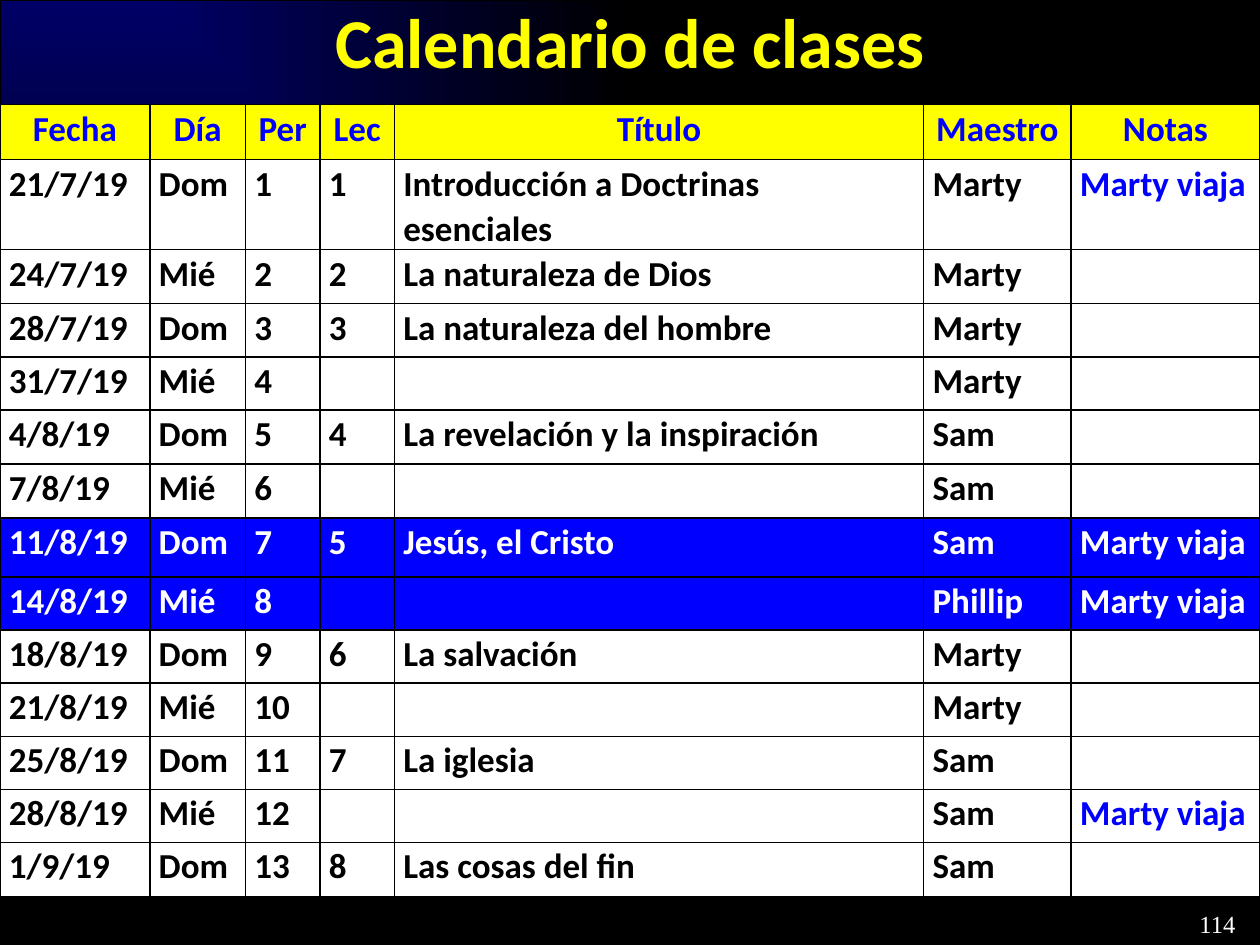
from lxml import etree
from pptx import Presentation
from pptx import util as u
from pptx.dml.color import RGBColor
from pptx.enum import shapes, text
from pptx.oxml import ns, parse_xml

YELLOW = RGBColor(0xFF, 0xFF, 0x00)
BLUE = RGBColor(0x00, 0x00, 0xFF)
NAVY = RGBColor(0x00, 0x00, 0x66)
WHITE = RGBColor(0xFF, 0xFF, 0xFF)
BLACK = RGBColor(0x00, 0x00, 0x00)

TITLE = "Calendario de clases"
PAGE_NUMBER = "114"
HEADINGS = ("Fecha", "Día", "Per", "Lec", "Título", "Maestro", "Notas")
AWAY = "Marty viaja"
# date, day, lesson, lesson title, teacher, note; the period is the row's number
CLASSES = [
    ("21/7/19", "Dom", "1", "Introducción a Doctrinas esenciales", "Marty", AWAY),
    ("24/7/19", "Mié", "2", "La naturaleza de Dios", "Marty", ""),
    ("28/7/19", "Dom", "3", "La naturaleza del hombre", "Marty", ""),
    ("31/7/19", "Mié", "", "", "Marty", ""),
    ("4/8/19", "Dom", "4", "La revelación y la inspiración", "Sam", ""),
    ("7/8/19", "Mié", "", "", "Sam", ""),
    ("11/8/19", "Dom", "5", "Jesús, el Cristo", "Sam", AWAY),
    ("14/8/19", "Mié", "", "", "Phillip", AWAY),
    ("18/8/19", "Dom", "6", "La salvación", "Marty", ""),
    ("21/8/19", "Mié", "", "", "Marty", ""),
    ("25/8/19", "Dom", "7", "La iglesia", "Sam", ""),
    ("28/8/19", "Mié", "", "", "Sam", AWAY),
    ("1/9/19", "Dom", "8", "Las cosas del fin", "Sam", ""),
]
HIGHLIGHTED_PERIODS = (7, 8)
NOTES_COLUMN = len(HEADINGS) - 1

SLIDE_WIDTH, SLIDE_HEIGHT = u.Cm(25.4), u.Cm(19.05)
COLUMN_WIDTHS = (3.02, 1.93, 1.5, 1.5, 10.67, 2.97, 3.81)
ROW_HEIGHTS = (1.11, 1.8, 1.09, 1.07, 1.07, 1.09, 1.09,
               1.19, 1.07, 1.07, 1.07, 1.07, 1.07, 1.09)
CELL_MARGINS = {"margin_left": u.Cm(0.18), "margin_right": u.Cm(0.18),
                "margin_top": 0, "margin_bottom": 0}
NO_MARGINS = dict.fromkeys(CELL_MARGINS, 0)
TITLE_FONT = {"name": "Calibri", "size": u.Pt(40), "bold": True}
TABLE_FONT = {"name": "Calibri", "size": u.Pt(20), "bold": True}
NUMBER_FONT = {"name": "Times New Roman", "size": u.Pt(14), "bold": False}


def set_all(target, values):
    for name, value in values.items():
        setattr(target, name, value)


def write(paragraph, words, font, color):
    run = paragraph.add_run()
    run.text = words
    set_all(run.font, font)
    run.font.color.rgb = color


def add_background(slide):
    backdrop = slide.shapes.add_shape(
        shapes.MSO_SHAPE.RECTANGLE, 0, 0, SLIDE_WIDTH, SLIDE_HEIGHT)
    backdrop.shadow.inherit = False
    backdrop.line.color.rgb = BLACK
    backdrop.line.width = u.Pt(0.75)
    backdrop.fill.gradient()
    for stop, color in zip(backdrop.fill.gradient_stops, (NAVY, BLACK)):
        stop.color.rgb = color
    direction = backdrop.element.spPr.find(".//" + ns.qn("a:lin"))
    direction.getparent().replace(direction, parse_xml(
        f'<a:path {ns.nsdecls("a")} path="rect">'
        '<a:fillToRect r="100000" b="100000"/></a:path>'))


def add_borders(cell):
    """Draw the four sides; they must come before the fill in the cell's XML."""
    properties = cell._tc.get_or_add_tcPr()
    for position, side in enumerate(("lnL", "lnR", "lnT", "lnB")):
        border = etree.Element(ns.qn(f"a:{side}"), w=str(u.Pt(1)))
        solid = etree.SubElement(border, ns.qn("a:solidFill"))
        etree.SubElement(solid, ns.qn("a:srgbClr"), val=str(BLACK))
        properties.insert(position, border)


def cell_colors(period, column):
    """Return fill and text colour; period 0 is the heading row."""
    if period == 0:
        return YELLOW, BLUE
    if period in HIGHLIGHTED_PERIODS:
        return BLUE, WHITE
    return WHITE, BLUE if column == NOTES_COLUMN else BLACK


def add_calendar(slide):
    rows = [HEADINGS] + [
        (date, day, str(period), *rest)
        for period, (date, day, *rest) in enumerate(CLASSES, start=1)]
    calendar = slide.shapes.add_table(
        len(rows), len(HEADINGS), 0, u.Cm(2.11),
        SLIDE_WIDTH, u.Cm(sum(ROW_HEIGHTS))).table
    for column, width in zip(calendar.columns, COLUMN_WIDTHS):
        column.width = u.Cm(width)
    for row, height in zip(calendar.rows, ROW_HEIGHTS):
        row.height = u.Cm(height)
    for period, row in enumerate(rows):
        for column, words in enumerate(row):
            cell = calendar.cell(period, column)
            fill, color = cell_colors(period, column)
            set_all(cell, CELL_MARGINS)
            cell.fill.solid()
            cell.fill.fore_color.rgb = fill
            add_borders(cell)
            if words:
                paragraph = cell.text_frame.paragraphs[0]
                paragraph.line_spacing = 1.07
                if period == 0:
                    paragraph.alignment = text.PP_ALIGN.CENTER
                write(paragraph, words, TABLE_FONT, color)


def main():
    deck = Presentation()
    deck.slide_width, deck.slide_height = SLIDE_WIDTH, SLIDE_HEIGHT
    slide = deck.slides.add_slide(deck.slide_layouts[6])
    add_background(slide)

    heading = slide.shapes.add_textbox(
        0, u.Cm(-0.03), SLIDE_WIDTH, u.Cm(1.5)).text_frame
    set_all(heading, {"word_wrap": True, **NO_MARGINS})
    heading.paragraphs[0].alignment = text.PP_ALIGN.CENTER
    write(heading.paragraphs[0], TITLE, TITLE_FONT, YELLOW)

    page = slide.shapes.add_textbox(
        u.Cm(23.93), u.Cm(18.21), u.Cm(1.47), u.Cm(0.84)).text_frame
    write(page.paragraphs[0], PAGE_NUMBER, NUMBER_FONT, WHITE)

    add_calendar(slide)
    deck.save("out.pptx")


if __name__ == "__main__":
    main()
